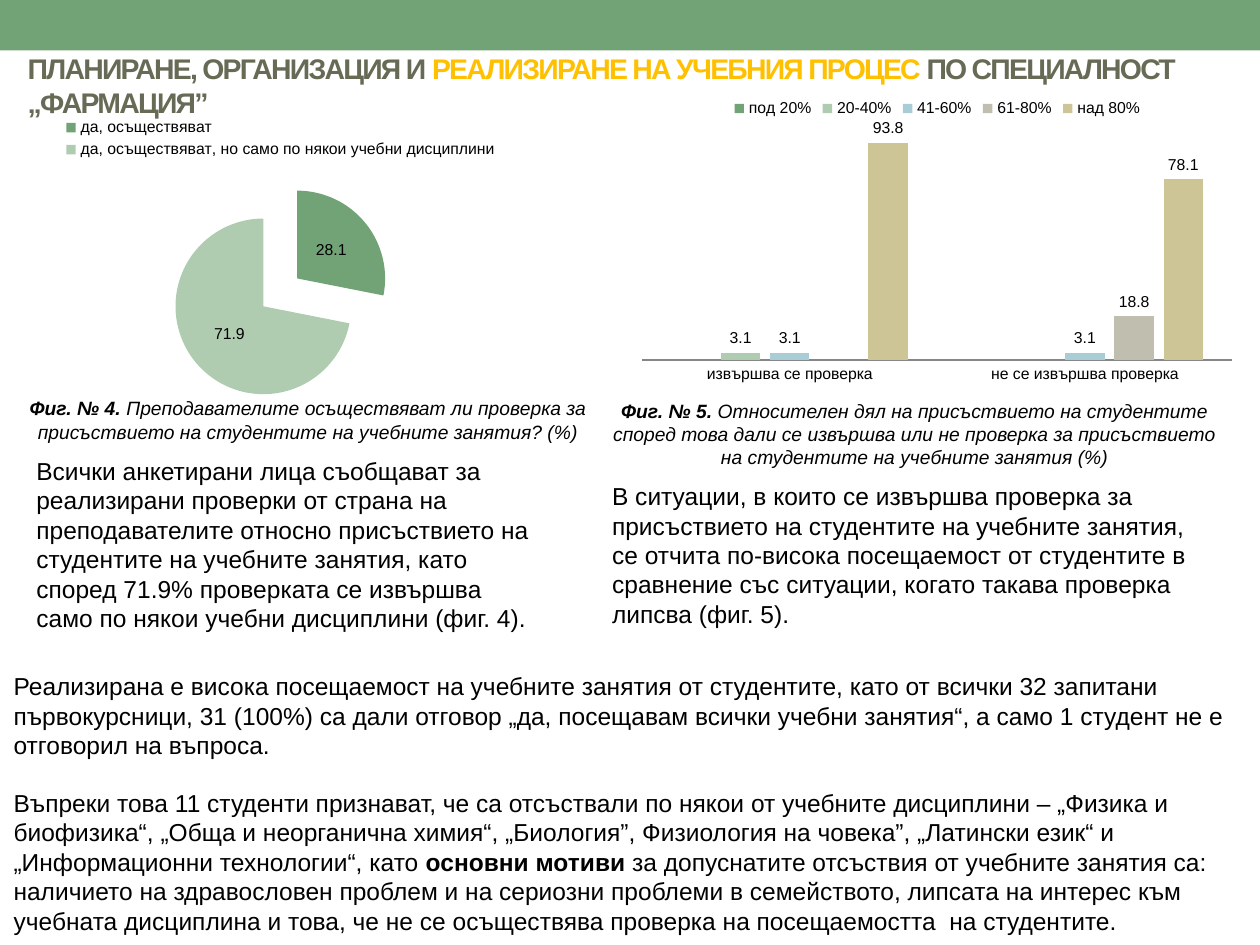
from dataclasses import dataclass

from lxml.etree import SubElement
from pptx import Presentation
from pptx.chart.data import CategoryChartData
from pptx.dml.color import RGBColor
from pptx.enum.chart import XL_CHART_TYPE, XL_LABEL_POSITION, XL_LEGEND_POSITION, XL_TICK_MARK
from pptx.enum.shapes import MSO_SHAPE
from pptx.enum.text import MSO_ANCHOR, MSO_AUTO_SIZE, PP_ALIGN
from pptx.oxml.ns import qn
from pptx.util import Inches, Pt


@dataclass(frozen=True)
class Theme:
    font: str = "Arial"
    text: str = "000000"
    head: str = "676A55"
    gold: str = "FFC000"
    axis: str = "868686"
    tones: tuple = ("72A376", "B0CCB0", "A8CDD7", "C0BEAF", "CEC597")
    title: float = 16.2
    body: float = 14
    note: float = 11
    label: float = 9
    gap: float = 16.1


def apply(item, values):
    for name, value in values.items():
        setattr(item, name, value)


def tone(code):
    return RGBColor.from_string(code)


class Page:
    cols, rows = 100, 75

    def __init__(self, deck, theme):
        self.theme = theme
        self.wide, self.high = deck.slide_width, deck.slide_height
        self.slide = deck.slides.add_slide(deck.slide_layouts[5])

    def place(self, col, row, wide, high):
        x, y = self.wide / self.cols, self.high / self.rows
        return int(col * x), int(row * y), int(wide * x), int(high * y)

    def style(self, font, size, color=None, **more):
        apply(font, {"name": self.theme.font, "size": Pt(size), **more})
        font.color.rgb = tone(color or self.theme.text)

    def fill(self, para, runs, size, **more):
        for text, extra in runs:
            run = para.add_run()
            run.text = text
            self.style(run.font, size, **{**more, **extra})

    def band(self, *cell):
        bar = self.slide.shapes.add_shape(MSO_SHAPE.RECTANGLE, *self.place(*cell))
        bar.shadow.inherit = False
        bar.fill.solid()
        bar.fill.fore_color.rgb = tone(self.theme.tones[0])
        bar.line.fill.background()

    def title(self, cell, runs):
        shape = self.slide.shapes.title
        apply(shape, dict(zip(("left", "top", "width", "height"), self.place(*cell))))
        frame = shape.text_frame
        apply(frame, {"word_wrap": True, "auto_size": MSO_AUTO_SIZE.NONE,
                      "vertical_anchor": MSO_ANCHOR.MIDDLE})
        para = frame.paragraphs[0]
        para.alignment = PP_ALIGN.LEFT
        self.fill(para, runs, self.theme.title, bold=True)
        for run in para.runs:
            run.font._element.set("spc", "-100")

    def text(self, cell, paras, size, align=PP_ALIGN.LEFT, **more):
        frame = self.slide.shapes.add_textbox(*self.place(*cell)).text_frame
        apply(frame, {"word_wrap": True, "auto_size": MSO_AUTO_SIZE.SHAPE_TO_FIT_TEXT})
        for index, runs in enumerate(paras):
            para = frame.add_paragraph() if index else frame.paragraphs[0]
            apply(para, {"alignment": align, "space_before": Pt(index * self.theme.gap)})
            self.fill(para, runs, size, **more)

    def note(self, cell, mark, words):
        runs = [(mark, {"bold": True}), (words, {"bold": False})]
        self.text(cell, [runs], self.theme.note, PP_ALIGN.CENTER, italic=True)

    def layout(self, part, shares, inner=False):
        for old in part.findall(qn("c:layout")):
            part.remove(old)
        root = SubElement(part, qn("c:layout"))
        box = SubElement(root, qn("c:manualLayout"))
        rules = [("layoutTarget", "inner")] if inner else []
        rules += [("xMode", "edge"), ("yMode", "edge"), *zip("xywh", shares)]
        for name, value in rules:
            SubElement(box, qn("c:" + name)).set("val", str(value))
        if inner:
            part.insert(0, root)
        else:
            part.find(qn("c:legendPos")).addnext(root)

    def chart(self, kind, cell, cats, series, plot, key):
        data = CategoryChartData(number_format="0.0")
        data.categories = cats
        for name, values in series:
            data.add_series(name, values)
        chart = self.slide.shapes.add_chart(kind, *self.place(*cell), data).chart
        apply(chart, {"has_title": False, "has_legend": True})
        self.style(chart.font, self.theme.label)
        apply(chart.legend, {"position": XL_LEGEND_POSITION.TOP, "include_in_layout": False})
        self.style(chart.legend.font, self.theme.label)
        self.layout(chart.legend._element, key)
        self.layout(chart._chartSpace.chart.plotArea, plot, True)
        return chart

    def labels(self, plot, spot):
        plot.has_data_labels = True
        apply(plot.data_labels, {"show_value": True, "position": spot})
        self.style(plot.data_labels.font, self.theme.label)

    def paint(self, item, color):
        item.format.fill.solid()
        item.format.fill.fore_color.rgb = tone(color)

    def pie(self, *parts, burst):
        plot = self.chart(XL_CHART_TYPE.PIE, *parts).plots[0]
        self.labels(plot, XL_LABEL_POSITION.CENTER)
        ring = plot.series[0]
        for index in range(len(ring.values)):
            self.paint(ring.points[index], self.theme.tones[index])
        push = SubElement(ring._element, qn("c:explosion"))
        push.set("val", str(burst))
        ring._element.find(qn("c:dPt")).addprevious(push)

    def bars(self, *parts):
        chart = self.chart(XL_CHART_TYPE.COLUMN_CLUSTERED, *parts)
        plot = chart.plots[0]
        apply(plot, {"gap_width": 150, "overlap": -25, "vary_by_categories": False})
        self.labels(plot, XL_LABEL_POSITION.OUTSIDE_END)
        for item, color in zip(plot.series, self.theme.tones):
            self.paint(item, color)
        apply(chart.value_axis, {"visible": False, "has_major_gridlines": False,
                                 "minimum_scale": 0, "maximum_scale": 100})
        base = chart.category_axis
        apply(base, {"major_tick_mark": XL_TICK_MARK.NONE, "has_major_gridlines": False})
        base.format.line.color.rgb = tone(self.theme.axis)
        self.style(base.tick_labels.font, self.theme.label)


def main():
    deck = Presentation()
    apply(deck, {"slide_width": Inches(10), "slide_height": Inches(7.5)})
    theme = Theme()
    page = Page(deck, theme)
    page.band(0, 0, 100, 4)
    page.title((1.2, 4.4, 96.9, 4.7), [
        ("ПЛАНИРАНЕ, ОРГАНИЗАЦИЯ И ", {"color": theme.head}),
        ("РЕАЛИЗИРАНЕ НА УЧЕБНИЯ ПРОЦЕС ", {"color": theme.gold}),
        ("ПО СПЕЦИАЛНОСТ „ФАРМАЦИЯ”", {"color": theme.head})])
    page.note((1.2, 31, 46.5, 4.7), "Фиг. № 4. ",
              "Преподавателите осъществяват ли проверка за присъствието на "
              "студентите на учебните занятия? (%)")
    page.text((1.9, 35.7, 41.8, 15.1), [[(
        "Всички анкетирани лица съобщават за реализирани проверки от страна на "
        "преподавателите относно присъствието на студентите на учебните занятия, "
        "като според 71.9% проверката се извършва само по някои учебни дисциплини "
        "(фиг. 4).", {})]], theme.body)
    page.note((47.6, 31.2, 50, 6.6), "Фиг. № 5. ",
              "Относителен дял на присъствието на студентите според това дали се "
              "извършва или не проверка за присъствието на студентите на учебните "
              "занятия (%)")
    page.text((47.6, 37.7, 50, 12.8), [[(
        "В ситуации, в които се извършва проверка за присъствието на студентите "
        "на учебните занятия, се отчита по-висока посещаемост от студентите в "
        "сравнение със ситуации, когато такава проверка липсва (фиг. 5).", {})]],
        theme.body)
    page.text((0.1, 52.8, 98.4, 22.2), [
        [("Реализирана е висока посещаемост на учебните занятия от студентите, като "
          "от всички 32 запитани първокурсници, 31 (100%) са дали отговор „да, "
          "посещавам всички учебни занятия“, а само 1 студент не е отговорил на "
          "въпроса.", {})],
        [("Въпреки това 11 студенти признават, че са отсъствали по някои от учебните "
          "дисциплини – „Физика и биофизика“, „Обща и неорганична химия“, „Биология”, "
          "Физиология на човека”, „Латински език“ и „Информационни технологии“, "
          "като ", {}),
         ("основни мотиви", {"bold": True}),
         (" за допуснатите отсъствия от учебните занятия са: наличието на "
          "здравословен проблем и на сериозни проблеми в семейството, липсата на "
          "интерес към учебната дисциплина и това, че не се осъществява проверка на "
          "посещаемостта  на студентите.", {})]], theme.body)
    page.pie((1.5, 8.1, 41.5, 25.2),
             ["да, осъществяват", "да, осъществяват, но само по някои учебни дисциплини"],
             [("Series 1", (28.1, 71.9))],
             (0.29, 0.25, 0.42, 0.7), (0.08, 0.04, 0.84, 0.15), burst=25)
    page.bars((50, 6.8, 48.8, 24.2),
              ["извършва се проверка", "не се извършва проверка"],
              [("под 20%", (None, None)), ("20-40%", (3.1, None)),
               ("41-60%", (3.1, 3.1)), ("61-80%", (None, 18.8)),
               ("над 80%", (93.8, 78.1))],
              (0.02, 0.14, 0.96, 0.76), (0.16, 0.04, 0.68, 0.07))
    deck.save("out.pptx")


if __name__ == "__main__":
    main()
